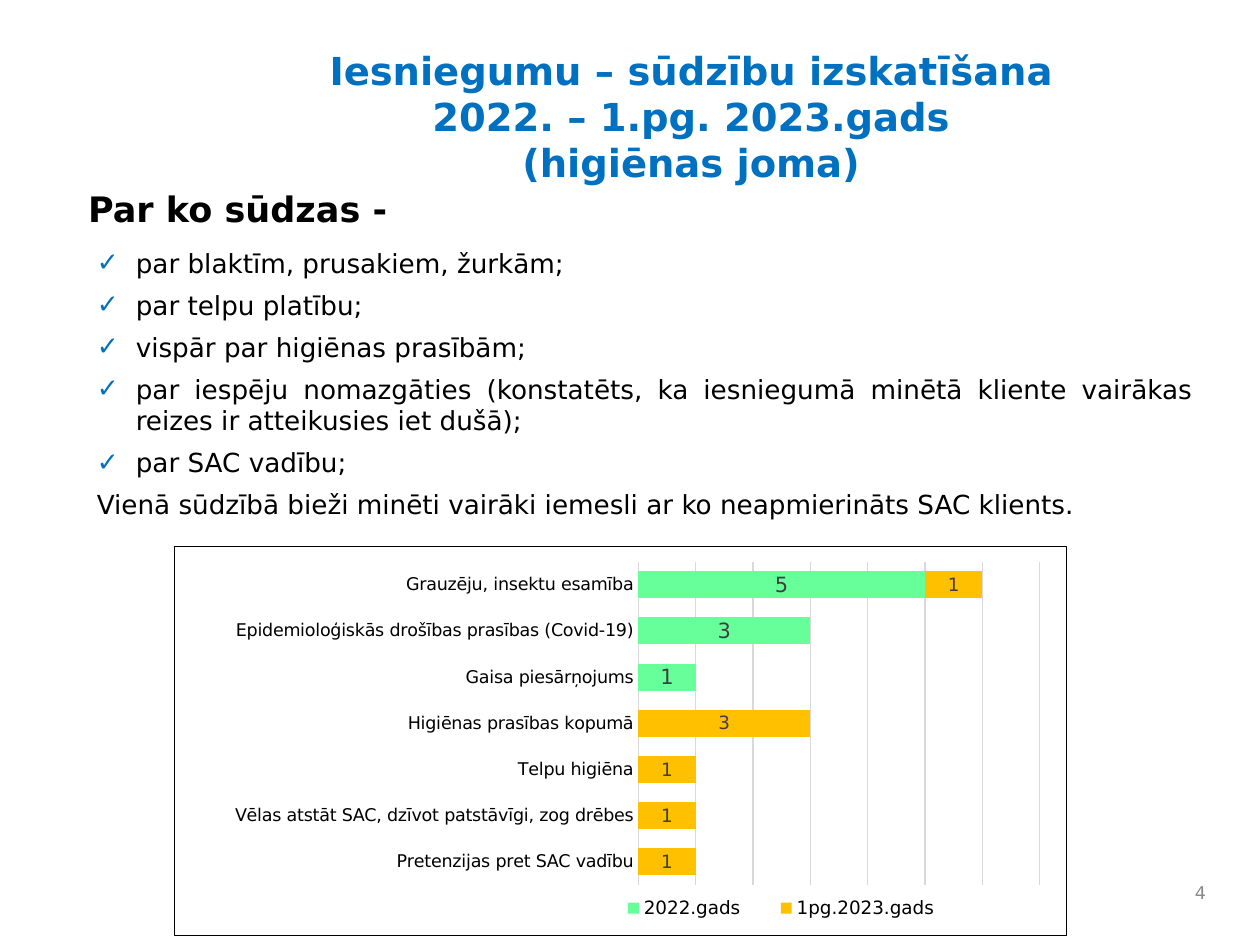
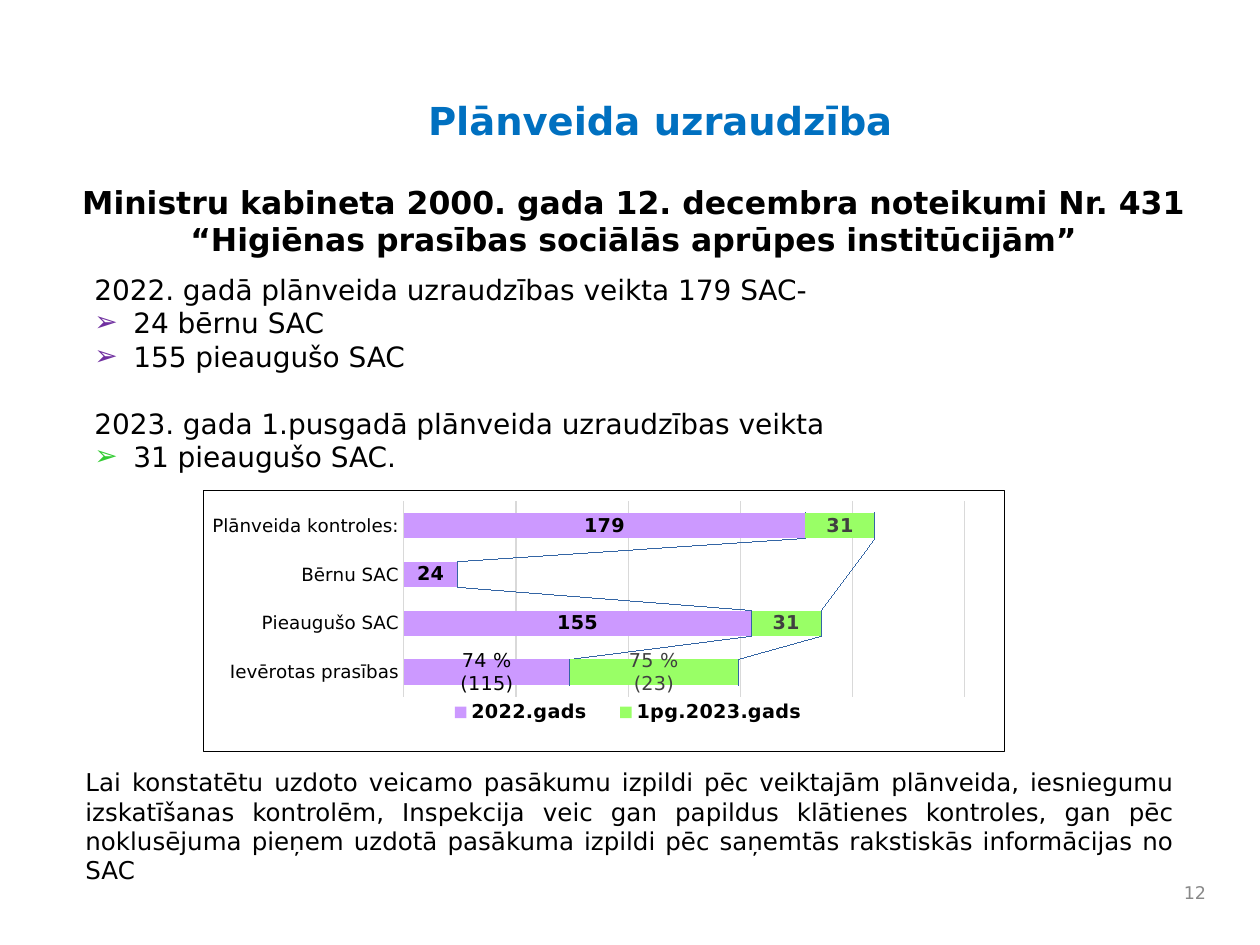
"""Build two slides on complaints and planned inspections of social care institutions."""
from dataclasses import dataclass

from lxml.etree import SubElement
from pptx import Presentation
from pptx.chart.data import CategoryChartData
from pptx.dml.color import RGBColor
from pptx.enum.chart import XL_CHART_TYPE as CT, XL_LEGEND_POSITION as LP, XL_TICK_MARK as TM
from pptx.enum.text import MSO_ANCHOR as MA, MSO_AUTO_SIZE as AS, PP_ALIGN as AL
from pptx.oxml import parse_xml
from pptx.oxml.ns import nsdecls, qn
from pptx.util import Pt

PX = 9144


@dataclass(frozen=True)
class Theme:
    font: str = "DejaVu Sans"
    chart_font: str = "Times New Roman"
    blue: str = "0070C0"
    black: str = "000000"
    label: str = "404040"
    grey: str = "898989"
    grid: str = "D9D9D9"
    mint: str = "66FF99"
    amber: str = "FFC000"
    lilac: str = "CC99FF"
    lime: str = "99FF66"
    purple: str = "7030A0"
    green: str = "33CC33"
    title: int = 22
    heading: int = 20
    subtitle: int = 18
    number: int = 10


T = Theme()


def write(sp, at, lines, size, color=T.black, bold=False, align=AL.LEFT, anchor=MA.TOP, after=0):
    sp.left, sp.top, sp.width, sp.height = [v * PX for v in at]
    tf = sp.text_frame
    tf.word_wrap = True
    tf.auto_size = AS.NONE
    tf.vertical_anchor = anchor
    for i, (text, bullet, mark) in enumerate(lines):
        p = tf.paragraphs[0] if i == 0 else tf.add_paragraph()
        if bullet:
            pPr = p._p.get_or_add_pPr()
            pPr.set("marL", str(31 * PX))
            pPr.set("indent", str(-31 * PX))
            SubElement(SubElement(pPr, qn("a:buClr")), qn("a:srgbClr")).set("val", mark)
            SubElement(pPr, qn("a:buFont")).set("typeface", T.font)
            SubElement(pPr, qn("a:buChar")).set("char", bullet)
        p.alignment = align
        p.space_after = Pt(after)
        for j, part in enumerate(text.split("\n")):
            if j:
                p.add_line_break()
            r = p.add_run()
            r.text = part
            r.font.name, r.font.size, r.font.bold = T.font, Pt(size), bold
            r.font.color.rgb = RGBColor.from_string(color)
    return tf


def add_bars(s, at, cats, series, gap, top, unit, cat_size, legend, plot_box, legend_box):
    data = CategoryChartData()
    data.categories = cats
    for name, values, *_ in series:
        data.add_series(name, values)
    chart = s.shapes.add_chart(CT.BAR_STACKED, *[v * PX for v in at], data).chart
    chart.has_title = False
    chart.font.name, chart.font.size = T.chart_font, Pt(10)
    chart.font.color.rgb = RGBColor.from_string(T.black)
    cat, val = chart.category_axis, chart.value_axis
    cat.major_tick_mark = cat.minor_tick_mark = TM.NONE
    val.minimum_scale, val.maximum_scale, val.major_unit = 0, top, unit
    val.has_major_gridlines, val.visible = True, False
    for line in (cat.format.line, val.major_gridlines.format.line):
        line.color.rgb = RGBColor.from_string(T.grid)
        line.width = Pt(0.75)
    chart.has_legend = True
    pos, legend_size, legend_bold = legend
    chart.legend.position = pos
    chart.legend.include_in_layout = False
    plot = chart.plots[0]
    plot.gap_width, plot.overlap, plot.vary_by_categories = gap, 100, False
    fonts = [(cat.tick_labels.font, cat_size, T.black, False),
             (chart.legend.font, legend_size, T.black, legend_bold)]
    for ser, (_, _, fill, size, color, bold) in zip(plot.series, series):
        ser.format.fill.solid()
        ser.format.fill.fore_color.rgb = RGBColor.from_string(fill)
        ser.data_labels.show_value = True
        fonts.append((ser.data_labels.font, size, color, bold))
    for font, size, color, bold in fonts:
        font.name, font.size, font.bold = T.font, Pt(size), bold
        font.color.rgb = RGBColor.from_string(color)
    root = chart.element
    area = root.find(".//" + qn("c:plotArea"))
    key = root.find(".//" + qn("c:legend"))
    for parent, box, inner in ((area, plot_box, True), (key, legend_box, False)):
        for old in parent.findall(qn("c:layout")):
            parent.remove(old)
        target = '<c:layoutTarget val="inner"/>' if inner else ""
        modes = '<c:xMode val="edge"/><c:yMode val="edge"/>'
        sizes = "".join(f'<c:{k} val="{v}"/>' for k, v in zip("xywh", box))
        layout = parse_xml(f'<c:layout {nsdecls("c")}><c:manualLayout>{target}{modes}{sizes}'
                           '</c:manualLayout></c:layout>')
        parent.insert(0 if inner else 1, layout)
    root.find(qn("c:chart")).addnext(parse_xml(
        f'<c:spPr {nsdecls("c", "a")}><a:noFill/><a:ln w="9525"><a:solidFill>'
        f'<a:srgbClr val="{T.black}"/></a:solidFill></a:ln></c:spPr>'))
    return chart


prs = Presentation()
prs.slide_width, prs.slide_height = 1000 * PX, 750 * PX
slides = []
for title, at, number in (
    ("Iesniegumu – sūdzību izskatīšana 2022. – 1.pg. 2023.gads\n(higiēnas joma)",
     (215, 32, 667, 145), "4"),
    ("Plānveida uzraudzība", (161, 72, 726, 44), "12"),
):
    s = prs.slides.add_slide(prs.slide_layouts[5])
    write(s.shapes.title, at, [(title, None, None)], T.title, T.blue, True, AL.CENTER)
    write(s.shapes.add_textbox(0, 0, 0, 0), (906, 692, 61, 33), [(number, None, None)],
          T.number, T.grey, align=AL.RIGHT, anchor=MA.MIDDLE)
    slides.append(s)
complaints, planned = slides

write(complaints.shapes.add_textbox(0, 0, 0, 0), (60, 144, 632, 44),
      [("Par ko sūdzas -", None, None)], T.heading, bold=True)
reasons = [
    "par blaktīm, prusakiem, žurkām;",
    "par telpu platību;",
    "vispār par higiēnas prasībām;",
    "par iespēju nomazgāties (konstatēts, ka iesniegumā minētā kliente vairākas reizes "
    "ir atteikusies iet dušā);",
    "par SAC vadību;",
]
closing = "Vienā sūdzībā bieži minēti vairāki iemesli ar ko neapmierināts SAC klients."
write(complaints.shapes.add_textbox(0, 0, 0, 0), (67, 191, 890, 229),
      [(text, "✓", T.blue) for text in reasons] + [(closing, None, None)],
      15, align=AL.JUSTIFY, after=6)
add_bars(
    complaints, (138, 433, 709, 310),
    ["Pretenzijas pret SAC vadību", "Vēlas atstāt SAC, dzīvot patstāvīgi, zog drēbes",
     "Telpu higiēna", "Higiēnas prasības kopumā", "Gaisa piesārņojums",
     "Epidemioloģiskās drošības prasības (Covid-19)", "Grauzēju, insektu esamība"],
    [("2022.gads", (None, None, None, None, 1, 3, 5), T.mint, 12, T.label, False),
     ("1pg.2023.gads", (1, 1, 1, 3, None, None, 1), T.amber, 10.5, T.label, False)],
    72, 7, 1, 10, (LP.BOTTOM, 10.5, False),
    (0.52, 0.04, 0.45, 0.83), (0.47, 0.89, 0.42, 0.08))

write(planned.shapes.add_textbox(0, 0, 0, 0), (39, 140, 928, 71),
      [("Ministru kabineta 2000. gada 12. decembra noteikumi Nr. 431", None, None),
       ("“Higiēnas prasības sociālās aprūpes institūcijām”", None, None)],
      T.subtitle, bold=True, align=AL.CENTER)
tf = write(planned.shapes.add_textbox(0, 0, 0, 0), (65, 211, 868, 172),
           [("2022. gadā plānveida uzraudzības veikta 179 SAC-", None, None),
            ("24 bērnu SAC", "➢", T.purple),
            ("155 pieaugušo SAC", "➢", T.purple),
            ("2023. gada 1.pusgadā plānveida uzraudzības veikta", None, None),
            ("31 pieaugušo SAC.", "➢", T.green)], 16)
tf.paragraphs[3].space_before = Pt(19)
chart = add_bars(
    planned, (161, 389, 637, 208),
    ["Ievērotas prasības", "Pieaugušo SAC", "Bērnu SAC", "Plānveida kontroles:"],
    [("2022.gads", (74, 155, 24, 179), T.lilac, 11, T.black, True),
     ("1pg.2023.gads", (75, 31, None, 31), T.lime, 11, T.label, True)],
    90, 250, 50, 10.5, (LP.RIGHT, 11, True),
    (0.25, 0.04, 0.7, 0.75), (0.28, 0.8, 0.5, 0.1))
chart.element.find(".//" + qn("c:overlap")).addnext(parse_xml(f'<c:serLines {nsdecls("c")}/>'))
for ser, parts, color in zip(chart.plots[0].series, (("74 %", "(115)"), ("75 %", "(23)")),
                             (T.black, T.label)):
    tf = ser.points[0].data_label.text_frame
    for i, part in enumerate(parts):
        p = tf.paragraphs[0] if i == 0 else tf.add_paragraph()
        r = p.add_run()
        r.text = part
        r.font.name, r.font.size, r.font.bold = T.font, Pt(11), False
        r.font.color.rgb = RGBColor.from_string(color)
write(planned.shapes.add_textbox(0, 0, 0, 0), (58, 604, 884, 104),
      [("Lai konstatētu uzdoto veicamo pasākumu izpildi pēc veiktajām plānveida, iesniegumu "
        "izskatīšanas kontrolēm, Inspekcija veic gan papildus klātienes kontroles, gan pēc "
        "noklusējuma pieņem uzdotā pasākuma izpildi pēc saņemtās rakstiskās informācijas no SAC",
        None, None)], 14, align=AL.JUSTIFY)

prs.save("out.pptx")
